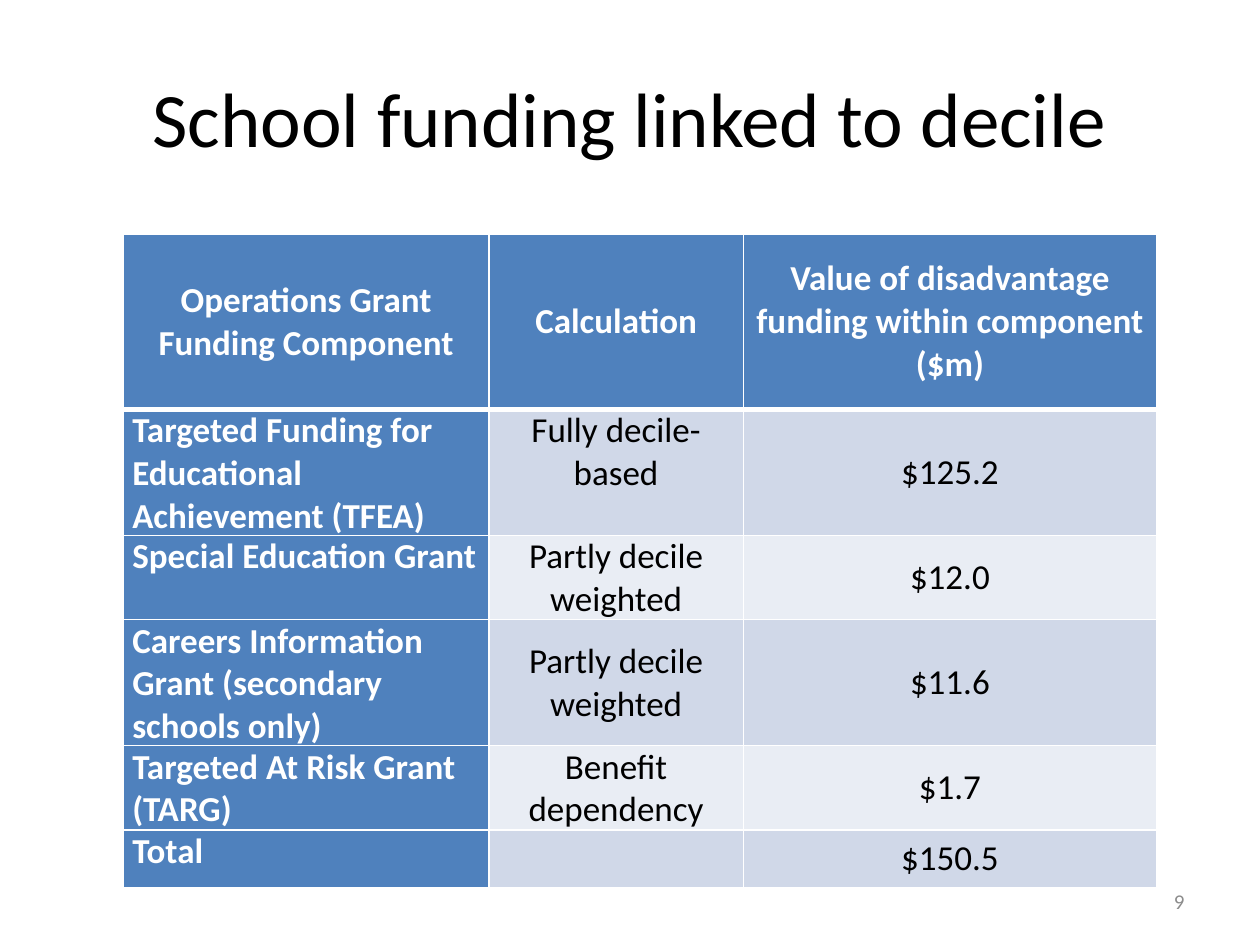
"""Build the slide on school funding linked to decile."""
from lxml import etree
from pptx import Presentation
from pptx.dml.color import RGBColor
from pptx.enum.text import MSO_ANCHOR, PP_ALIGN
from pptx.oxml.ns import qn
from pptx.util import Inches, Pt

LEFT, CENTER, RIGHT = PP_ALIGN.LEFT, PP_ALIGN.CENTER, PP_ALIGN.RIGHT
TOP, MIDDLE = MSO_ANCHOR.TOP, MSO_ANCHOR.MIDDLE
WHITE, BLACK, BLUE, GRAY = "FFFFFF", "000000", "4F81BD", "8C8C8C"
BANDS = ["D0D8E8", "E9EDF4"]
COLUMNS = [2.9, 2.02, 3.28]
HEIGHTS = [1.39, 0.94, 0.63, 0.92, 0.63, 0.46]
ROWS = [
    ["Operations Grant Funding Component", "Calculation",
     "Value of disadvantage funding within component\n($m)"],
    ["Targeted Funding for Educational Achievement (TFEA)", "Fully decile-based", "$125.2"],
    ["Special Education Grant", "Partly decile weighted", "$12.0"],
    ["Careers Information Grant (secondary schools only)", "Partly decile weighted", "$11.6"],
    ["Targeted At Risk Grant (TARG)", "Benefit dependency", "$1.7"],
    ["Total", "", "$150.5"],
]


def rgb(color):
    return RGBColor.from_string(color)


def write(frame, text, size, color, align, bold=False):
    frame.text = text
    frame.word_wrap = True
    for para in frame.paragraphs:
        para.alignment = align
        para.font.size = Pt(size)
        for span in para.runs:
            span.font.name = "Calibri"
            span.font.size = Pt(size)
            span.font.bold = bold
            span.font.color.rgb = rgb(color)


deck = Presentation()
deck.slide_width, deck.slide_height = Inches(10), Inches(7.5)
page = deck.slides.add_slide(deck.slide_layouts[6])

labels = [
    ("School funding linked to decile", (0.5, 0.3, 9, 1.25), 44, BLACK, CENTER),
    ("9", (7.17, 6.95, 2.33, 0.4), 12, GRAY, RIGHT),
]
for text, place, size, color, align in labels:
    box = page.shapes.add_textbox(*map(Inches, place))
    write(box.text_frame, text, size, color, align)
    box.text_frame.vertical_anchor = MIDDLE

table = page.shapes.add_table(
    len(ROWS), len(COLUMNS), Inches(0.98), Inches(1.86),
    Inches(sum(COLUMNS)), Inches(sum(HEIGHTS))).table
for column, width in zip(table.columns, COLUMNS):
    column.width = Inches(width)

for r, texts in enumerate(ROWS):
    table.rows[r].height = Inches(HEIGHTS[r])
    for c, text in enumerate(texts):
        cell = table.cell(r, c)
        heading = r == 0 or c == 0
        side = c == 0 and r > 0
        top_aligned = side or (r, c) == (1, 1)
        write(cell.text_frame, text, 20, WHITE if heading else BLACK,
              LEFT if side else CENTER, heading)
        cell.vertical_anchor = TOP if top_aligned else MIDDLE
        cell.margin_left = cell.margin_right = Inches(0.07)
        cell.margin_top = cell.margin_bottom = 0
        widths = {"a:lnL": 1, "a:lnR": 1, "a:lnT": 3 if r == 1 else 1, "a:lnB": 3 if r == 0 else 1}
        for tag, points in widths.items():
            line = etree.SubElement(cell._tc.get_or_add_tcPr(), qn(tag), w=str(Pt(points)))
            paint = etree.SubElement(line, qn("a:solidFill"))
            etree.SubElement(paint, qn("a:srgbClr"), val=WHITE)
        cell.fill.solid()
        cell.fill.fore_color.rgb = rgb(BLUE if heading else BANDS[(r - 1) % 2])

deck.save("out.pptx")
